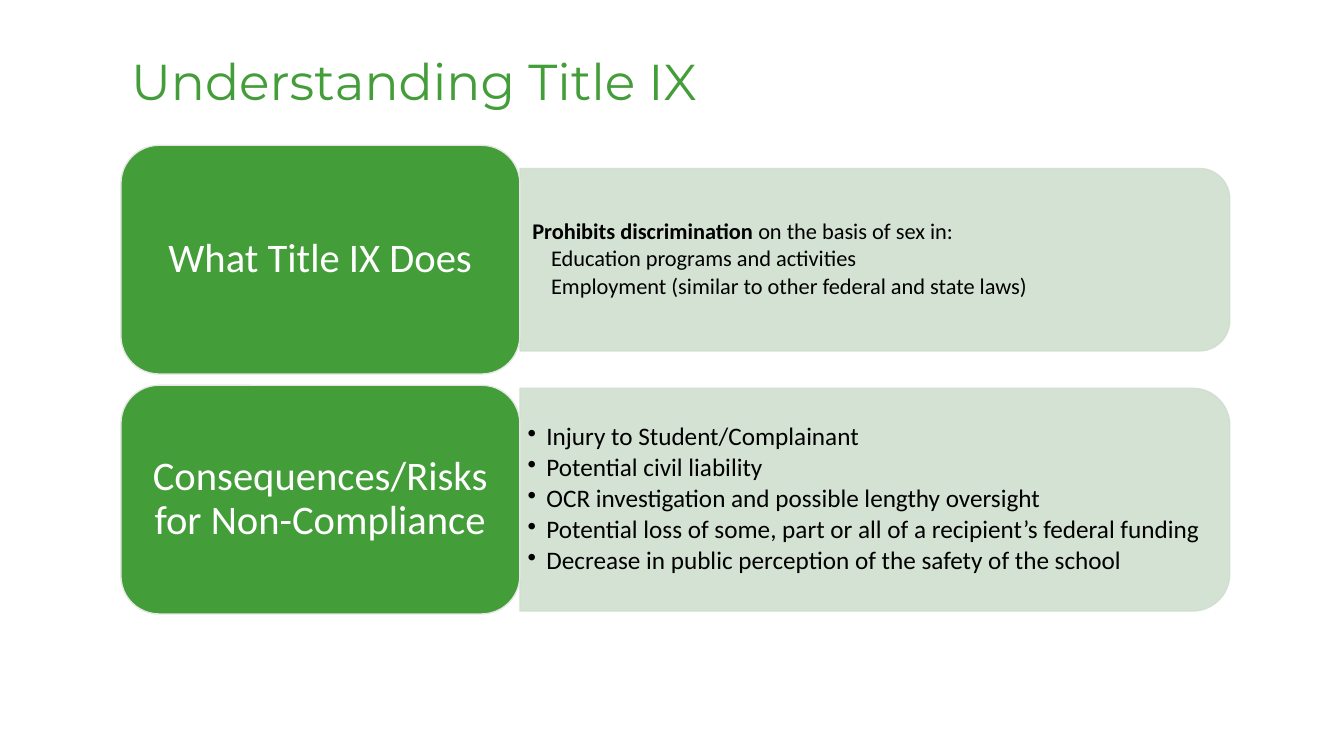
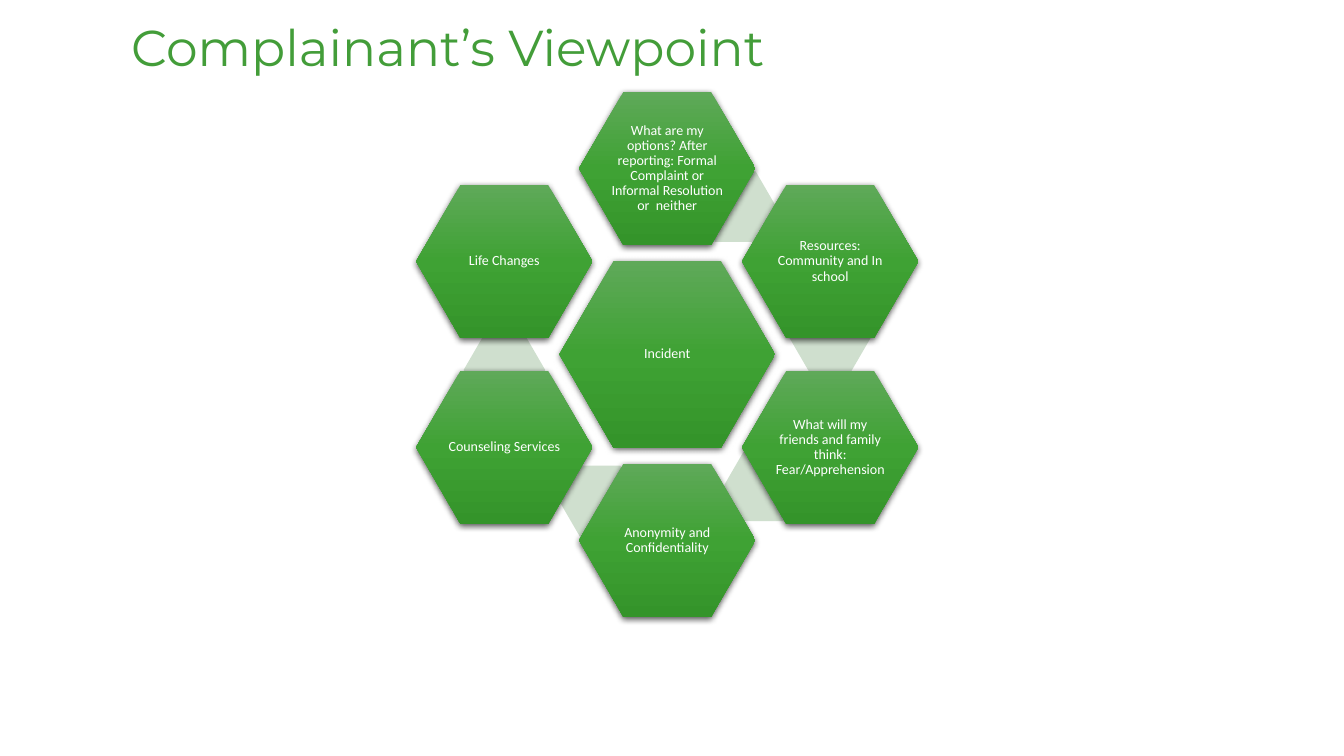
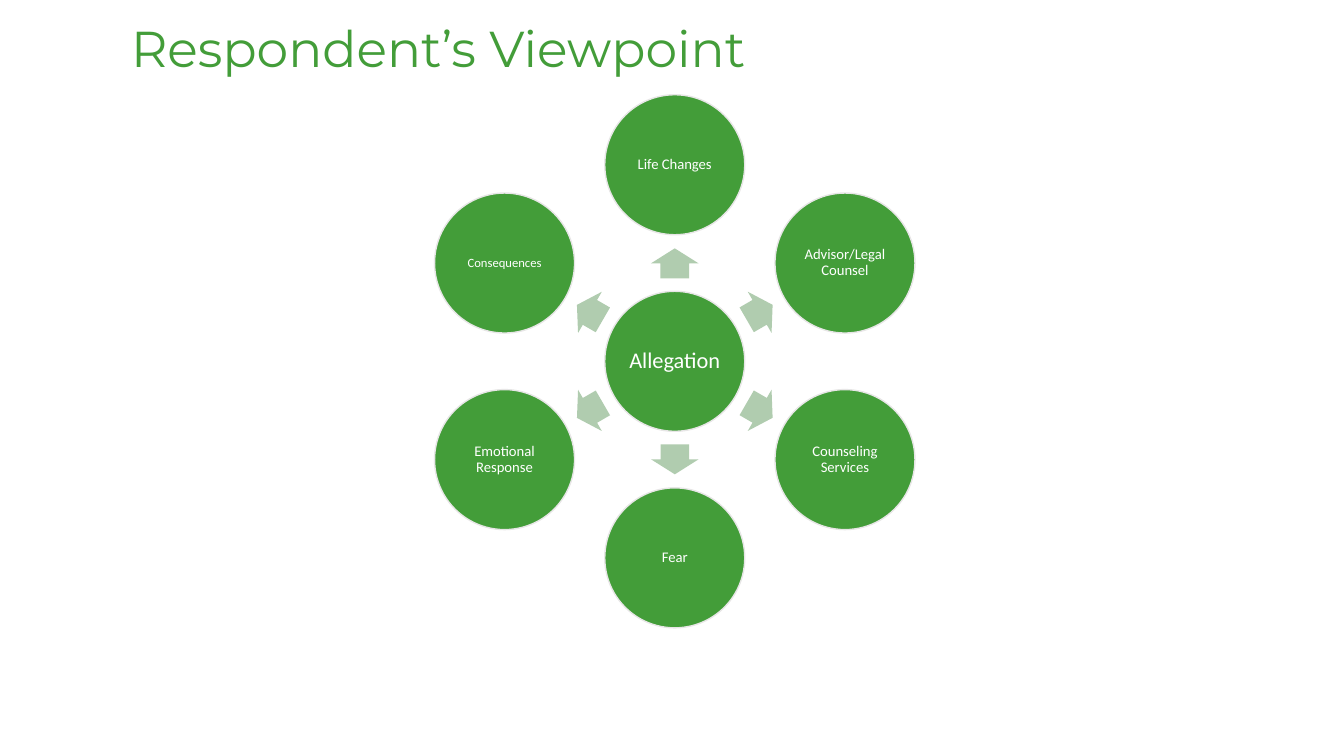
import copy
import math

import lxml.etree
import pptx
import pptx.dml.color
import pptx.enum.shapes
import pptx.enum.text
import pptx.oxml.ns
import pptx.util

Pt = pptx.util.Pt
RGBColor = pptx.dml.color.RGBColor
SHAPE = pptx.enum.shapes.MSO_SHAPE
ALIGN = pptx.enum.text.PP_ALIGN
qn = pptx.oxml.ns.qn

# Shared colours and fonts
GREEN = RGBColor(0x43, 0x9D, 0x39)
PALE_GREEN = RGBColor(0xCF, 0xDF, 0xCE)
ARROW_GREEN = RGBColor(0xB0, 0xCC, 0xAF)
GRADIENT = [
    RGBColor(0x5F, 0xA9, 0x59),
    RGBColor(0x3F, 0xA2, 0x34),
    RGBColor(0x34, 0x94, 0x2A),
]
OUTLINE = RGBColor(0xE7, 0xE6, 0xE6)
WHITE = RGBColor(0xFF, 0xFF, 0xFF)
BLACK = RGBColor(0, 0, 0)
TITLE_FONT = "Montserrat"
BODY_FONT = "Calibri"


def write_text(shape, paragraphs, size, color=WHITE, font=BODY_FONT,
               alignment=ALIGN.CENTER, insets=(1, 1), bold_lead="",
               bullet=False, indents=None):
    """Fill a shape with paragraphs, vertically centred."""
    frame = shape.text_frame
    frame.word_wrap = True
    frame.auto_size = pptx.enum.text.MSO_AUTO_SIZE.NONE
    frame.vertical_anchor = pptx.enum.text.MSO_ANCHOR.MIDDLE
    frame.margin_left = frame.margin_right = Pt(insets[0])
    frame.margin_top = frame.margin_bottom = Pt(insets[1])
    for index, text in enumerate(paragraphs):
        paragraph = frame.add_paragraph() if index else frame.paragraphs[0]
        paragraph.alignment = alignment
        paragraph.line_spacing = 0.9
        paragraph.space_before = Pt(0)
        if index < len(paragraphs) - 1:
            paragraph.space_after = Pt(round(size * 0.15, 2))
        properties = paragraph._p.get_or_add_pPr()
        if indents:
            properties.set("marL", str(Pt(indents[index])))
        if bullet:
            properties.set("indent", str(-Pt(indents[index])))
            mark = lxml.etree.SubElement(properties, qn("a:buChar"))
            mark.set("char", "•")
        paragraph.font.size = Pt(size)
        paragraph.font.name = font
        paragraph.font.color.rgb = color
        if index == 0 and bold_lead:
            lead = paragraph.add_run()
            lead.text = bold_lead
            lead.font.bold = True
        paragraph.add_run().text = text


def add_centered(slide, kind, center_x, center_y, width, height, color,
                 line=None):
    """Add a preset shape around a centre point."""
    shape = slide.shapes.add_shape(
        kind, Pt(center_x - width / 2), Pt(center_y - height / 2),
        Pt(width), Pt(height))
    shape.fill.solid()
    shape.fill.fore_color.rgb = color
    if line is None:
        shape.line.fill.background()
    else:
        shape.line.color.rgb = line
        shape.line.width = Pt(1)
    shape.shadow.inherit = False
    return shape


presentation = pptx.Presentation()
presentation.slide_width = Pt(960)
presentation.slide_height = Pt(540)

# Slides with their titles
slides = []
for title, top, height in [
    ("Understanding Title IX", 22.3, 76.3),
    ("Complainant’s Viewpoint", 0, 72),
    ("Respondent’s Viewpoint", 0, 72.7),
]:
    slide = presentation.slides.add_slide(presentation.slide_layouts[5])
    placeholder = slide.shapes.title
    placeholder.left, placeholder.top = Pt(86.4), Pt(top)
    placeholder.width, placeholder.height = Pt(792), Pt(height)
    write_text(placeholder, [title], 36, color=GREEN, font=TITLE_FONT,
               alignment=ALIGN.LEFT, insets=(7.2, 3.6))
    slides.append(slide)
overview, complainant, respondent = slides

# Overview: a green block and a pale bar in each row
BLOCK_LEFT, BLOCK_WIDTH, BLOCK_HEIGHT = 86.4, 285, 163.4
BAR_LEFT, BAR_WIDTH = BLOCK_LEFT + BLOCK_WIDTH, 507
FIRST_ROW_CENTER, ROW_PITCH = 185.5, 171.4
rows = [
    ("What Title IX Does", 130.3,
     ["on the basis of sex in:",
      "Education programs and activities",
      "Employment (similar to other federal and state laws)"],
     dict(size=16, bold_lead="Prohibits discrimination ",
          insets=(8.8, 4.4), indents=[0, 13.5, 13.5])),
    ("Consequences/Risks for Non-Compliance", 159.1,
     ["Injury to Student/Complainant",
      "Potential civil liability",
      "OCR investigation and possible lengthy oversight",
      "Potential loss of some, part or all of a recipient’s federal funding",
      "Decrease in public perception of the safety of the school"],
     dict(size=18, bullet=True, insets=(5.4, 2.7), indents=[13.5] * 5)),
]
for row, (heading, bar_height, details, text_format) in enumerate(rows):
    center_y = FIRST_ROW_CENTER + row * ROW_PITCH
    bar = add_centered(overview, SHAPE.ROUND_2_SAME_RECTANGLE,
                       BAR_LEFT + BAR_WIDTH / 2, center_y,
                       bar_height, BAR_WIDTH, PALE_GREEN, PALE_GREEN)
    bar.rotation = 90
    for holder in (bar.element.spPr, bar.line._ln):
        bar_color = holder.find(qn("a:solidFill")).find(qn("a:srgbClr"))
        lxml.etree.SubElement(bar_color, qn("a:alpha")).set("val", "90000")
    # Level text over the turned bar
    box = overview.shapes.add_textbox(
        Pt(BAR_LEFT), Pt(center_y - bar_height / 2),
        Pt(500), Pt(bar_height))
    write_text(box, details, color=BLACK, alignment=ALIGN.LEFT, **text_format)
    block = add_centered(overview, SHAPE.ROUNDED_RECTANGLE,
                         BLOCK_LEFT + BLOCK_WIDTH / 2, center_y,
                         BLOCK_WIDTH, BLOCK_HEIGHT, GREEN, OUTLINE)
    write_text(block, [heading], 29, insets=(8.7, 4.4))

# Complainant: pale links, then hexagons around a hub
HUB_X, HUB_Y = 476.6, 253.1
RING_X, RING_Y = 134.4, 132.8
for offset_x, offset_y in [(48.6, -105.5), (116.3, -12), (69.5, 94),
                           (-48, 104.8), (-116.3, 11.2)]:
    link = add_centered(complainant, SHAPE.HEXAGON, HUB_X + offset_x,
                        HUB_Y + offset_y, 58.3, 50.4, PALE_GREEN)
    link.adjustments[0] = 0.29

hexagons = [("Incident", HUB_X, HUB_Y, 154, 133.2)]
for index, label in enumerate([
    "What are my options? After reporting: Formal Complaint or "
    "Informal Resolution or  neither",
    "Resources: Community and In school",
    "What will my friends and family think: Fear/Apprehension",
    "Anonymity and Confidentiality",
    "Counseling Services",
    "Life Changes",
]):
    angle = math.radians(60 * index - 90)
    hexagons.append((label, HUB_X + RING_X * math.cos(angle),
                     HUB_Y + RING_Y * math.sin(angle), 126, 109.4))

for label, center_x, center_y, width, height in hexagons:
    hexagon = add_centered(complainant, SHAPE.HEXAGON, center_x, center_y,
                           width, height, GREEN)
    hexagon.adjustments[0] = 0.29
    # Three-stop gradient from top to bottom
    hexagon.fill.gradient()
    hexagon.fill.gradient_angle = 270
    stop_list = hexagon.element.spPr.find(qn("a:gradFill")).find(qn("a:gsLst"))
    stop_list.insert(1, copy.deepcopy(stop_list[0]))
    for stop, position, color in zip(hexagon.fill.gradient_stops,
                                     (0, 0.5, 1), GRADIENT):
        stop.position = position
        stop.color.rgb = color
    # Soft shadow below
    effects = hexagon.element.spPr.find(qn("a:effectLst"))
    shadow = lxml.etree.SubElement(
        effects, qn("a:outerShdw"), blurRad=str(Pt(4.5)), dist=str(Pt(1.5)),
        dir="5400000", algn="ctr", rotWithShape="0")
    shadow_color = lxml.etree.SubElement(shadow, qn("a:srgbClr"), val="000000")
    lxml.etree.SubElement(shadow_color, qn("a:alpha"), val="63000")
    write_text(hexagon, [label], 10)

# Respondent: circles around a hub, with an arrow towards each
HUB_X, HUB_Y = 482, 258.1
RING_RADIUS, ARROW_RADIUS, DIAMETER = 140.4, 70, 100
circles = [("Allegation", 16, HUB_X, HUB_Y)]
for index, (label, size) in enumerate([
    ("Life Changes", 10.5),
    ("Advisor/Legal Counsel", 10.5),
    ("Counseling Services", 10.5),
    ("Fear", 10.5),
    ("Emotional Response", 10.5),
    ("Consequences", 9),
]):
    degrees = 60 * index - 90
    cosine = math.cos(math.radians(degrees))
    sine = math.sin(math.radians(degrees))
    arrow = add_centered(respondent, SHAPE.RIGHT_ARROW,
                         HUB_X + ARROW_RADIUS * cosine,
                         HUB_Y + ARROW_RADIUS * sine, 21.4, 34, ARROW_GREEN)
    arrow.rotation = degrees % 360
    arrow.adjustments[0] = 0.6
    circles.append((label, size, HUB_X + RING_RADIUS * cosine,
                    HUB_Y + RING_RADIUS * sine))

for label, size, center_x, center_y in circles:
    circle = add_centered(respondent, SHAPE.OVAL, center_x, center_y,
                          DIAMETER, DIAMETER, GREEN, OUTLINE)
    write_text(circle, [label], size)

presentation.save("out.pptx")
